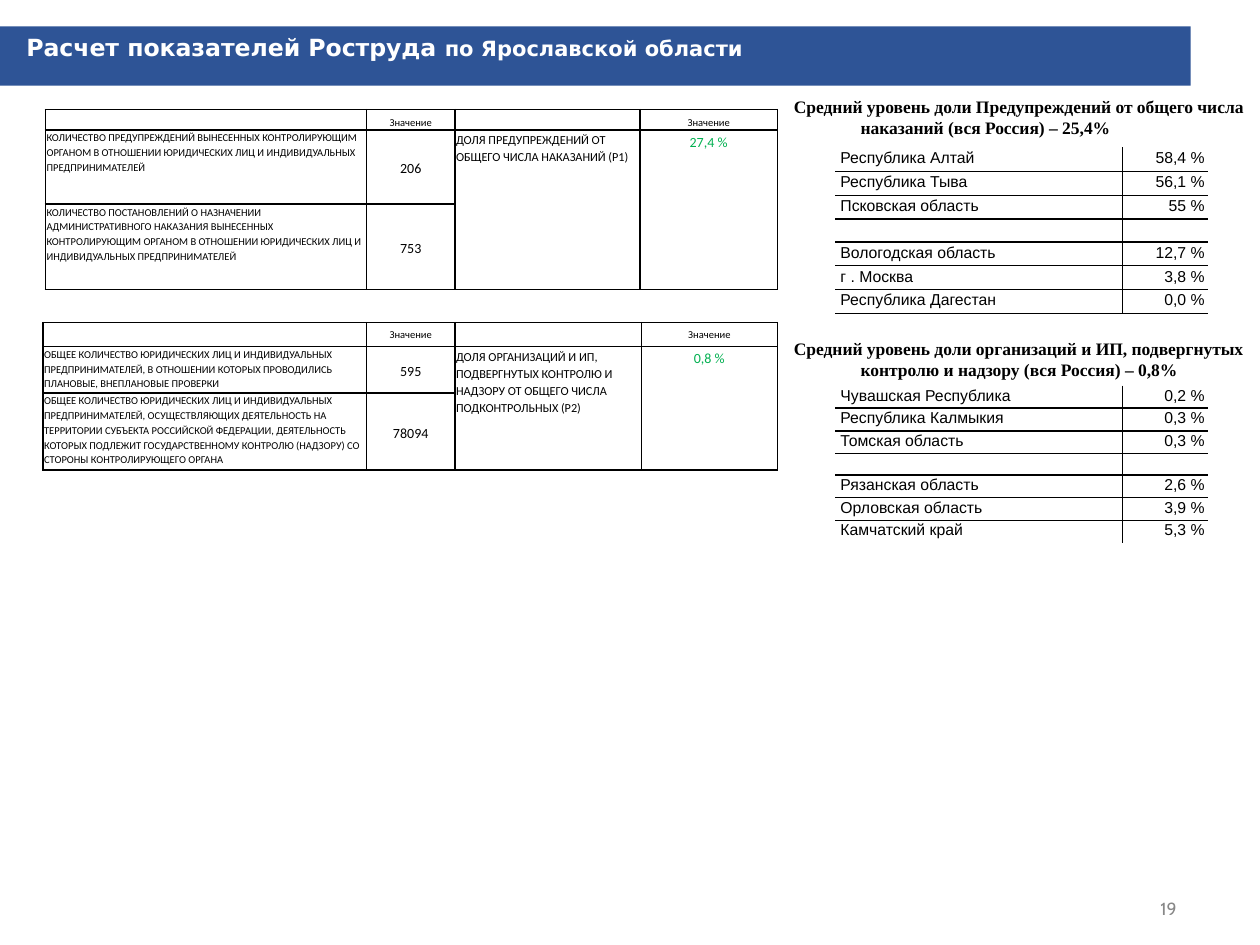
from lxml import etree
from pptx import Presentation
from pptx.dml.color import RGBColor
from pptx.enum import shapes, text
from pptx.oxml import ns
from pptx.util import Inches, Pt

BLACK, WHITE, GREEN = "000000", "FFFFFF", "00B050"
CENTER, RIGHT = text.PP_ALIGN.CENTER, text.PP_ALIGN.RIGHT
TOP, MIDDLE = text.MSO_ANCHOR.TOP, text.MSO_ANCHOR.MIDDLE


def color(value):
    return RGBColor.from_string(value)


def style(para, font, size, ink=BLACK, bold=False, align=None, spacing=None):
    para.font.name, para.font.size, para.font.bold = font, Pt(size), bold
    para.font.color.rgb = color(ink)
    para.alignment, para.line_spacing = align, spacing


def set_indent(para, left, first=0.0):
    properties = para._p.get_or_add_pPr()
    properties.set("marL", str(Inches(left)))
    properties.set("indent", str(Inches(first)))


def add_text(page, left, top, width, height, spans, left_indent, first=0.0, inset=0.01, **look):
    """Text box of one paragraph; each span is (wording, size or None)."""
    box = page.shapes.add_textbox(Inches(left), Inches(top), Inches(width), Inches(height))
    frame = box.text_frame
    frame.word_wrap = True
    frame.margin_left = frame.margin_right = frame.margin_bottom = 0
    frame.margin_top = Inches(inset)
    para = frame.paragraphs[0]
    style(para, **look)
    set_indent(para, left_indent, first)
    for wording, size in spans:
        span = para.add_run()
        span.text = wording
        if size:
            span.font.size = Pt(size)


def set_borders(cell, sides):
    """Draw the named sides (of L, R, T, B) and hide the others."""
    properties = cell._tc.get_or_add_tcPr()
    for side in "LRTB":
        line = etree.SubElement(properties, ns.qn("a:ln" + side), w=str(Pt(1)))
        if side in sides:
            fill = etree.SubElement(line, ns.qn("a:solidFill"))
            etree.SubElement(fill, ns.qn("a:srgbClr"), val=BLACK)
        else:
            etree.SubElement(line, ns.qn("a:noFill"))
    cell.fill.background()


def add_grid(page, left, top, columns, rows):
    frame = page.shapes.add_table(len(rows), len(columns), Inches(left), Inches(top),
                                  Inches(sum(columns)), Inches(sum(rows)))
    table = frame.table
    table.first_row = table.horz_banding = False
    for column, width in zip(table.columns, columns):
        column.width = Inches(width)
    for row, height in zip(table.rows, rows):
        row.height = Inches(height)
    return table


def fill_cell(cell, wording, margin=0.0, top=0.0, anchor=TOP, **look):
    cell.margin_left = cell.margin_right = Inches(margin)
    cell.margin_top, cell.margin_bottom = Inches(top), 0
    cell.vertical_anchor = anchor
    para = cell.text_frame.paragraphs[0]
    style(para, **look)
    if wording:
        para.add_run().text = wording
    else:
        para._p.get_or_add_endParaRPr().set("sz", str(look["size"] * 100))
    return para


def add_indicator(page, left, top, columns, rows, header_top, measures, share, result):
    """Two measured quantities on the left, the share they give on the right."""
    table = add_grid(page, left, top, columns, rows)
    for cell in table.iter_cells():
        set_borders(cell, "LRTB")

    def put(row, column, wording, size, **look):
        fill_cell(table.cell(row, column), wording, margin=0.01, font="Calibri",
                  size=size, spacing=1.15, **look)

    for column, wording in enumerate(("", "Значение", "", "Значение")):
        put(0, column, wording, 6, top=header_top if wording else 0, align=CENTER)
    for row, (name, value) in enumerate(measures, 1):
        put(row, 0, name, 6)
        put(row, 1, value, 8, top=0.01, anchor=MIDDLE, align=CENTER)
    for column in (2, 3):
        table.cell(1, column).merge(table.cell(2, column))
    put(1, 2, share, 7, top=0.01)
    put(1, 3, result, 8, top=0.01, ink=GREEN, align=CENTER)


def add_rating(page, top, row_height, heading_top, heading, best, worst, closed):
    """Heading over the best and worst regions, parted by an empty row."""
    add_text(page, 6.29, heading_top, 3.61, 0.36, [(heading, None)], 0.54, -0.53,
             font="Times New Roman", size=10, bold=True)
    entries = best + [("", "")] + worst
    heights = [row_height if name else row_height - 0.01 for name, _ in entries]
    table = add_grid(page, 6.63, top, [2.28, 0.68], heights)
    last = len(entries) - 1
    for row, entry in enumerate(entries):
        sides = ("T" if row else "") + ("B" if row < last or closed else "")
        for column, wording in enumerate(entry):
            cell = table.cell(row, column)
            set_borders(cell, sides + "RL"[column])
            para = fill_cell(cell, wording, anchor=MIDDLE, font="Arial", size=9,
                             spacing=Pt(8.8), align=RIGHT if column else None)
            if column == 0:
                set_indent(para, 0.04)
            else:
                cell.margin_right = Inches(0.03)


def main():
    deck = Presentation()
    deck.slide_width, deck.slide_height = Inches(10), Inches(7.5)
    page = deck.slides.add_slide(deck.slide_layouts[6])

    # Title band
    band = page.shapes.add_shape(shapes.MSO_SHAPE.RECTANGLE, 0, Inches(0.21),
                                 Inches(9.45), Inches(0.47))
    band.shadow.inherit = False
    band.fill.solid()
    band.fill.fore_color.rgb = color("2E5496")
    band.line.fill.background()
    add_text(page, 0.2, 0.25, 9.7, 0.25,
             [("Расчет показателей Роструда ", None), ("по Ярославской области", 12)],
             0.01, font="DejaVu Sans", size=13.5, ink=WHITE, bold=True)

    # Indicator tables
    add_indicator(
        page, 0.36, 0.87, [2.55, 0.7, 1.47, 1.09], [0.16, 0.59, 0.68], 0.04,
        [("КОЛИЧЕСТВО ПРЕДУПРЕЖДЕНИЙ ВЫНЕСЕННЫХ КОНТРОЛИРУЮЩИМ ОРГАНОМ В ОТНОШЕНИИ "
          "ЮРИДИЧЕСКИХ ЛИЦ И ИНДИВИДУАЛЬНЫХ ПРЕДПРИНИМАТЕЛЕЙ", "206"),
         ("КОЛИЧЕСТВО ПОСТАНОВЛЕНИЙ О НАЗНАЧЕНИИ АДМИНИСТРАТИВНОГО НАКАЗАНИЯ ВЫНЕСЕННЫХ "
          "КОНТРОЛИРУЮЩИМ ОРГАНОМ В ОТНОШЕНИИ ЮРИДИЧЕСКИХ ЛИЦ И ИНДИВИДУАЛЬНЫХ "
          "ПРЕДПРИНИМАТЕЛЕЙ", "753")],
        "ДОЛЯ ПРЕДУПРЕЖДЕНИЙ ОТ ОБЩЕГО ЧИСЛА НАКАЗАНИЙ (P1)", "27,4 %")
    add_indicator(
        page, 0.34, 2.56, [2.57, 0.7, 1.48, 1.08], [0.19, 0.37, 0.61], 0.03,
        [("ОБЩЕЕ КОЛИЧЕСТВО ЮРИДИЧЕСКИХ ЛИЦ И ИНДИВИДУАЛЬНЫХ ПРЕДПРИНИМАТЕЛЕЙ, В ОТНОШЕНИИ "
          "КОТОРЫХ ПРОВОДИЛИСЬ ПЛАНОВЫЕ, ВНЕПЛАНОВЫЕ ПРОВЕРКИ", "595"),
         ("ОБЩЕЕ КОЛИЧЕСТВО ЮРИДИЧЕСКИХ ЛИЦ И ИНДИВИДУАЛЬНЫХ ПРЕДПРИНИМАТЕЛЕЙ, "
          "ОСУЩЕСТВЛЯЮЩИХ ДЕЯТЕЛЬНОСТЬ НА ТЕРРИТОРИИ СУБЪЕКТА РОССИЙСКОЙ ФЕДЕРАЦИИ, "
          "ДЕЯТЕЛЬНОСТЬ КОТОРЫХ ПОДЛЕЖИТ ГОСУДАРСТВЕННОМУ КОНТРОЛЮ (НАДЗОРУ) СО СТОРОНЫ "
          "КОНТРОЛИРУЮЩЕГО ОРГАНА", "78094")],
        "ДОЛЯ ОРГАНИЗАЦИЙ И ИП, ПОДВЕРГНУТЫХ КОНТРОЛЮ И НАДЗОРУ ОТ ОБЩЕГО ЧИСЛА "
        "ПОДКОНТРОЛЬНЫХ (P2)", "0,8 %")

    # Regional ratings
    add_rating(
        page, 1.17, 0.19, 0.75,
        "Средний уровень доли Предупреждений от общего числа наказаний (вся Россия) – 25,4%",
        [("Республика Алтай", "58,4 %"), ("Республика Тыва", "56,1 %"),
         ("Псковская область", "55 %")],
        [("Вологодская область", "12,7 %"), ("г . Москва", "3,8 %"),
         ("Республика Дагестан", "0,0 %")], closed=True)
    add_rating(
        page, 3.06, 0.18, 2.67,
        "Средний уровень доли организаций и ИП, подвергнутых контролю и надзору "
        "(вся Россия) – 0,8%",
        [("Чувашская Республика", "0,2 %"), ("Республика Калмыкия", "0,3 %"),
         ("Томская область", "0,3 %")],
        [("Рязанская область", "2,6 %"), ("Орловская область", "3,9 %"),
         ("Камчатский край", "5,3 %")], closed=False)

    # Page number
    add_text(page, 9.17, 7.15, 0.23, 0.17, [("19", None)], 0.04, inset=0,
             font="Cabin", size=10, ink="888888", spacing=Pt(10.5))

    deck.save("out.pptx")


if __name__ == "__main__":
    main()
